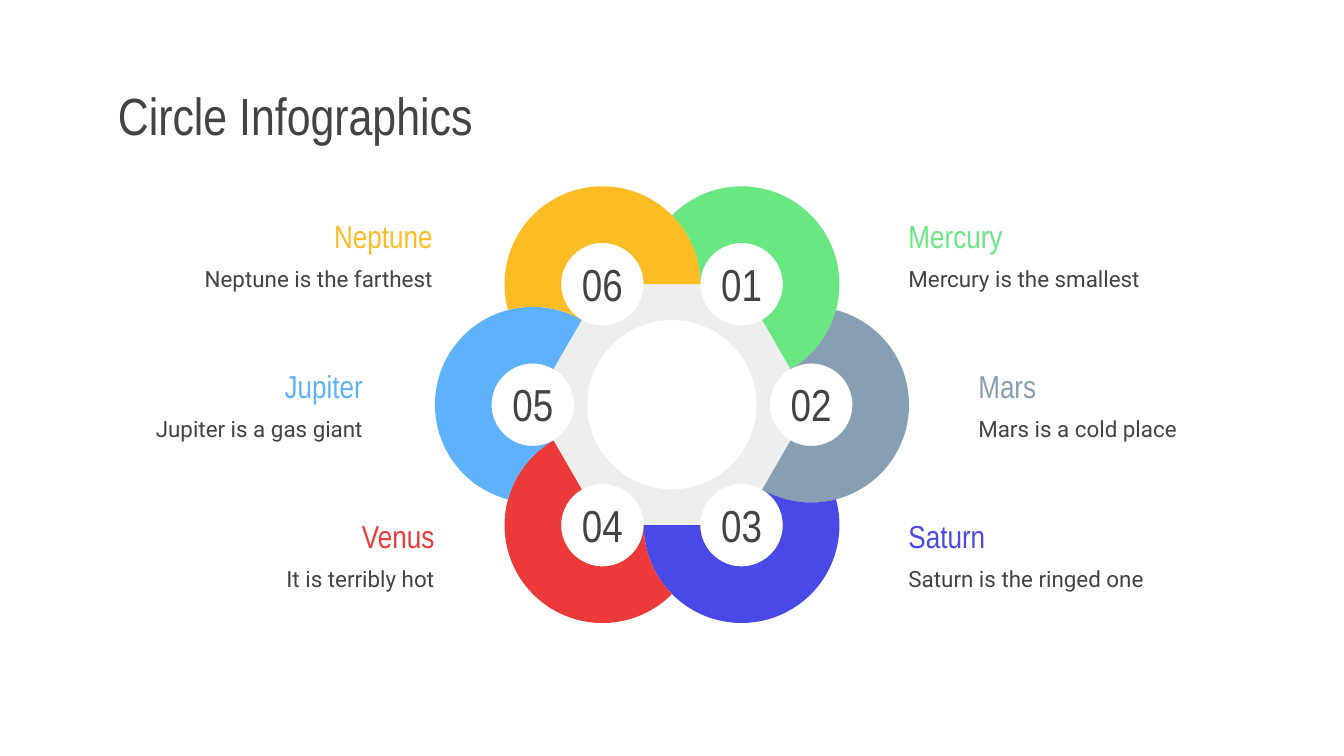
"""Build the Circle Infographics slide: six overlapping petals around a hub."""
from math import acos, cos, degrees, radians, sin, tan

from pptx import Presentation
from pptx.dml.color import RGBColor
from pptx.enum.text import MSO_ANCHOR as Anchor, PP_ALIGN as Align
from pptx.oxml.ns import qn
from pptx.oxml.xmlchemy import OxmlElement
from pptx.util import Cm, Pt

DARK = RGBColor(0x43, 0x43, 0x43)
HUB_GREY = RGBColor(0xEE, 0xEE, 0xEE)
GREEN = RGBColor(0x69, 0xE7, 0x81)
SLATE = RGBColor(0x86, 0x9F, 0xB2)
INDIGO = RGBColor(0x49, 0x49, 0xE7)
RED = RGBColor(0xEC, 0x3A, 0x3B)
BLUE = RGBColor(0x5E, 0xB2, 0xFC)
YELLOW = RGBColor(0xFC, 0xBD, 0x24)

CENTER = (12.7, 7.65)
RING_RADIUS = 2.63
PETAL_RADIUS = 1.85
NUMBER_RADIUS = 0.78
HOLE_RADIUS = 1.6
OVERLAP_ANGLE = degrees(acos(RING_RADIUS / 2 / PETAL_RADIUS))
ARC_PIECES = 4

LABEL_WIDTH = 5.03
LABEL_TOP = 3.86
LABEL_STEP = 2.84
NOTE_OFFSET = 0.97

PLANETS = [
    ("Mercury", "Mercury is the smallest", GREEN, 16.92, 0, Align.LEFT),
    ("Mars", "Mars is a cold place", SLATE, 18.24, 1, Align.LEFT),
    ("Saturn", "Saturn is the ringed one", INDIGO, 16.92, 2, Align.LEFT),
    ("Venus", "It is terribly hot", RED, 8.46, 2, Align.RIGHT),
    ("Jupiter", "Jupiter is a gas giant", BLUE, 7.11, 1, Align.RIGHT),
    ("Neptune", "Neptune is the farthest", YELLOW, 8.43, 0, Align.RIGHT),
]


def arc(center, radius, start, end):
    """Return Bezier points: an anchor, then two controls and an anchor per piece."""
    step = radians(end - start) / ARC_PIECES
    reach = 4 / 3 * tan(step / 4)
    polar = [(1, 0, radians(start))]
    for piece in range(ARC_PIECES):
        angle = radians(start) + piece * step
        polar += [(1, reach, angle), (1, -reach, angle + step), (1, 0, angle + step)]
    return [
        (center[0] + radius * (out * cos(a) - side * sin(a)),
         center[1] + radius * (out * sin(a) + side * cos(a)))
        for out, side, a in polar
    ]


def add_text(text, *, left, top, width, height, size, font="Arial Narrow", color=DARK, align=Align.LEFT):
    box = page.shapes.add_textbox(Cm(left), Cm(top), Cm(width), Cm(height))
    frame = box.text_frame
    frame.word_wrap = True
    frame.vertical_anchor = Anchor.MIDDLE
    frame.margin_left = frame.margin_right = Cm(0.25)
    frame.margin_top = frame.margin_bottom = Cm(0.25)
    para = frame.paragraphs[0]
    para.alignment = align
    span = para.add_run()
    span.text = text
    span.font.name = font
    span.font.size = Pt(size)
    span.font.color.rgb = color


deck = Presentation()
deck.slide_width = Cm(25.4)
deck.slide_height = Cm(14.29)
page = deck.slides.add_slide(deck.slide_layouts[6])

add_text("Circle Infographics", left=1.98, top=1.5, width=21.46, height=1.35, size=28)

directions = [60 * index - 60 for index in range(len(PLANETS))]
centers = [
    (CENTER[0] + RING_RADIUS * cos(radians(angle)), CENTER[1] + RING_RADIUS * sin(radians(angle)))
    for angle in directions
]

hub = [arc(center, NUMBER_RADIUS, angle - 120, angle - 240) for angle, center in zip(directions, centers)]
hole = [arc(CENTER, HOLE_RADIUS, 0, 360)]
outlines = [(HUB_GREY, [hub, hole])]
for index, (angle, center) in enumerate(zip(directions, centers)):
    petal = [
        arc(center, PETAL_RADIUS, angle - 120 + OVERLAP_ANGLE, angle + 120),
        arc(center, NUMBER_RADIUS, angle + 120, angle - 120),
        arc(centers[index - 1], PETAL_RADIUS, angle + 60, angle + 60 - OVERLAP_ANGLE),
    ]
    outlines.append((PLANETS[index][2], [petal]))

for color, contours in outlines:
    builder = None
    for first_arc, *other_arcs in contours:
        points = list(first_arc)
        for other in other_arcs:
            points += [points[-1], other[0], *other]
        start, *rest = [(Cm(x), Cm(y)) for x, y in points]
        if builder is None:
            builder = page.shapes.build_freeform(*start)
        else:
            builder.move_to(*start)
        builder.add_line_segments(rest, close=True)
    shape = builder.convert_to_shape()
    outline = shape.element.find(".//" + qn("a:path"))
    lines = outline.findall(qn("a:lnTo"))
    for trio in zip(lines[::3], lines[1::3], lines[2::3]):
        curve = OxmlElement("a:cubicBezTo")
        trio[0].addprevious(curve)
        for line in trio:
            curve.append(line[0])
            outline.remove(line)
    shape.shadow.inherit = False
    shape.fill.solid()
    shape.fill.fore_color.rgb = color
    shape.line.fill.background()

for number, (planet, center) in enumerate(zip(PLANETS, centers), start=1):
    name, note, color, edge, row, align = planet
    left = edge if align == Align.LEFT else edge - LABEL_WIDTH
    top = LABEL_TOP + LABEL_STEP * row
    add_text(name, left=left, top=top, width=LABEL_WIDTH, height=1.19, size=17, color=color, align=align)
    add_text(note, left=left, top=top + NOTE_OFFSET, width=LABEL_WIDTH, height=0.86, size=12,
             font="Roboto", align=align)
    add_text(f"{number:02d}", left=center[0] - 0.68, top=center[1] - 0.56, width=1.36, height=1.09,
             size=24, align=Align.CENTER)

deck.save("out.pptx")
